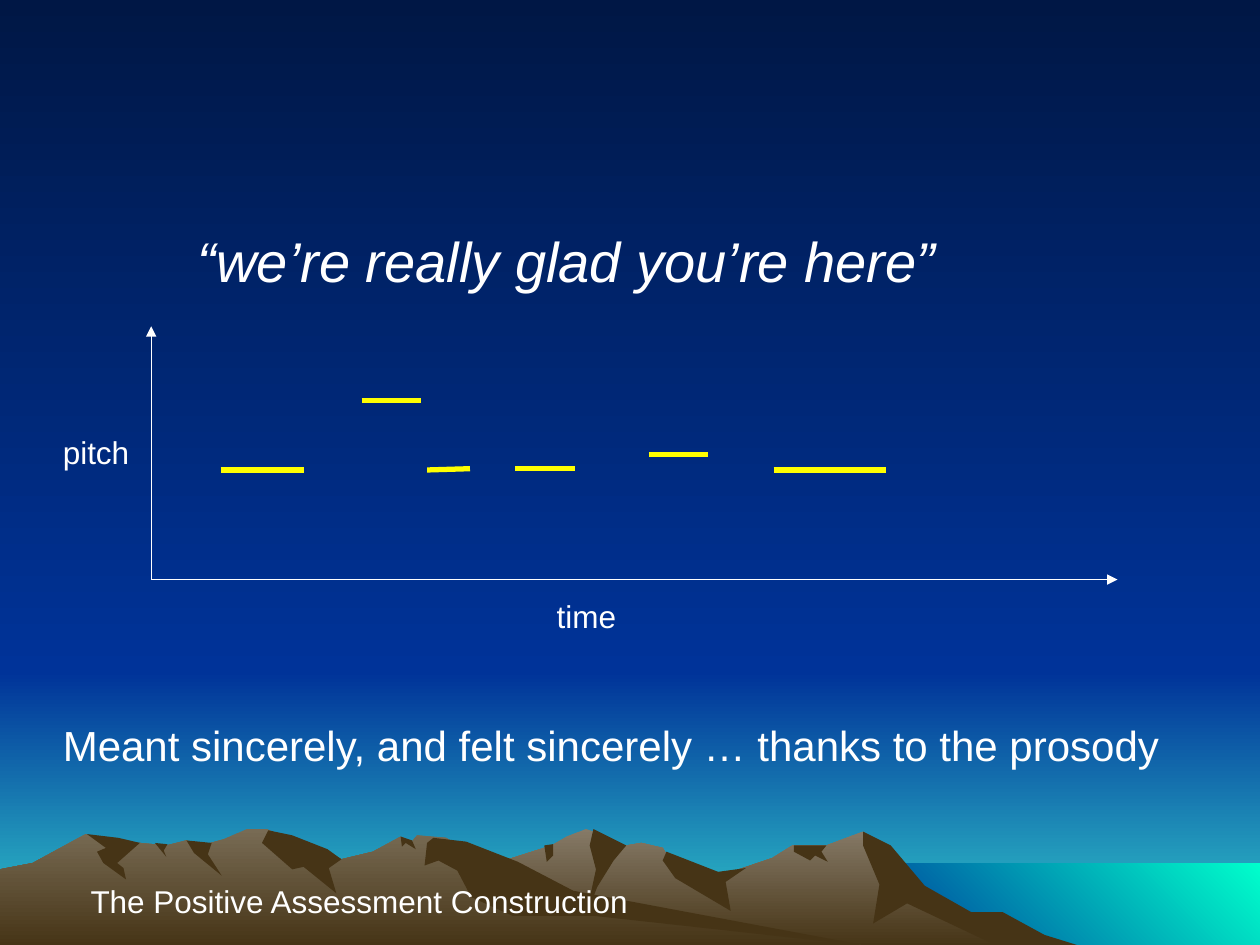
from lxml.etree import SubElement
from pptx import Presentation
from pptx.dml.color import RGBColor
from pptx.enum.shapes import MSO_CONNECTOR
from pptx.enum.text import MSO_AUTO_SIZE
from pptx.oxml.ns import qn
from pptx.util import Inches, Pt

WHITE = RGBColor(0xFF, 0xFF, 0xFF)
YELLOW = RGBColor(0xFF, 0xFF, 0x00)
NIGHT = RGBColor(0x00, 0x17, 0x45)
NAVY = RGBColor(0x00, 0x33, 0x99)
TEAL = RGBColor(0x33, 0xCC, 0xCC)
MINT = RGBColor(0x00, 0xFF, 0xCC)
BROWN = RGBColor(0x46, 0x34, 0x16)
STONE = RGBColor(0x86, 0x7A, 0x67)
CLAY = RGBColor(0x78, 0x6B, 0x54)
FONT = "Arial"
DOWN, RISE = 270, 45  # gradient angles

# Each range: crest from left to right, then the shaded slopes.
# Points are inches right of and below the top left of the range.
RIGHT_CREST = [
    (0.69, 0.51), (1.36, 0.27), (1.8, 0.13), (1.92, 0.06), (2.07, 0),
    (2.16, 0.03), (2.28, 0.15), (2.51, 0.11), (2.68, 0.15), (2.78, 0.32),
    (3.08, 0.39), (3.55, 0.23), (3.71, 0.13), (3.98, 0.13), (4.27, 0.02),
    (4.44, 0.13), (4.65, 0.4), (5.06, 0.65), (5.44, 0.82),
]
RIGHT_SHADE = {
    "east slope": [
        (4.27, 0.02), (4.49, 0.13), (4.76, 0.45), (5.13, 0.66), (5.38, 0.66),
        (5.71, 0.84), (6, 0.93), (5.34, 0.93), (4.62, 0.59), (4.35, 0.75),
        (4.4, 0.44), (4.27, 0.13)],
    "main gully": [
        (2.13, 0), (2.39, 0.13), (2.29, 0.25), (2.16, 0.46), (2.07, 0.69),
        (2.15, 0.32), (2.1, 0.13)],
    "middle gully": [
        (2.71, 0.18), (3.12, 0.34), (3.34, 0.31), (3.18, 0.42), (3.22, 0.65),
        (2.78, 0.39), (2.68, 0.25)],
    "notch": [
        (3.72, 0.13), (3.98, 0.13), (3.94, 0.18), (3.99, 0.26), (3.89, 0.21),
        (3.85, 0.25), (3.72, 0.18)],
    "crack": [(1.74, 0.13), (1.81, 0.12), (1.81, 0.21), (1.76, 0.26)],
}
LEFT_CREST = [
    (0, 0.32), (0.26, 0.27), (0.68, 0.04), (0.94, 0.13), (1.11, 0.11),
    (1.32, 0.13), (1.48, 0.09), (1.6, 0.13), (1.78, 0.08), (1.96, 0),
    (2.12, 0), (2.23, 0.05), (2.36, 0.23), (2.6, 0.18), (2.71, 0.24),
    (2.96, 0.18), (3.18, 0.06), (3.27, 0.1), (3.31, 0.05), (3.54, 0.07),
    (4.32, 0.54), (6.67, 0.9),
]
LEFT_SHADE = {
    "west gully": [
        (0.69, 0.04), (0.94, 0.07), (1.11, 0.11), (0.93, 0.27), (0.98, 0.31),
        (1, 0.4), (0.82, 0.27), (0.77, 0.18), (0.84, 0.15)],
    "nick": [(1.23, 0.11), (1.33, 0.12), (1.3, 0.17), (1.32, 0.22)],
    "short gully": [
        (1.48, 0.09), (1.68, 0.11), (1.65, 0.2), (1.76, 0.37), (1.54, 0.19)],
    "main gully": [
        (2.13, 0.01), (2.32, 0.05), (2.6, 0.16), (2.71, 0.24), (2.61, 0.31),
        (2.67, 0.51), (2.41, 0.3), (2.32, 0.32), (2.08, 0.11)],
    "crack": [
        (3.18, 0.06), (3.27, 0.09), (3.3, 0.16), (3.22, 0.11), (3.19, 0.14)],
    "long slope": [
        (3.44, 0.07), (3.7, 0.1), (4.11, 0.26), (4.55, 0.49), (6.9, 0.93),
        (4.72, 0.69), (4.07, 0.69), (3.74, 0.54), (3.63, 0.33), (3.48, 0.25),
        (3.37, 0.29), (3.39, 0.11)],
}

# Each syllable: start and end, from the top left of the chart
TONES = [
    (0.55, 1.14, 1.21, 1.14),
    (1.67, 0.59, 2.14, 0.59),
    (2.19, 1.14, 2.53, 1.13),
    (2.89, 1.13, 3.36, 1.13),
    (4.94, 1.14, 5.83, 1.14),
    (3.95, 1.02, 4.42, 1.02),
]


def area(*sides):
    return [Inches(side) for side in sides]


def part(box, left, top, width, height):
    """Return a box placed from the top left of another box."""
    return [box[0] + Inches(left), box[1] + Inches(top),
            Inches(width), Inches(height)]


def shade(fill, first, last, angle=DOWN):
    fill.gradient()
    fill.gradient_angle = angle
    for stop, color in zip(fill.gradient_stops, (first, last)):
        stop.color.rgb = color


def outline(shapes, box, points):
    """Draw a closed outline, without a line, from points in inches."""
    dots = [part(box, x, y, 0, 0)[:2] for x, y in points]
    pen = shapes.build_freeform(*dots[0])
    pen.add_line_segments(dots[1:], close=True)
    shape = pen.convert_to_shape()
    shape.shadow.inherit = False
    shape.line.fill.background()
    return shape


def band(shapes, box, first, last, angle=DOWN):
    wide, high = box[2].inches, box[3].inches
    corners = [(0, 0), (wide, 0), (wide, high), (0, high)]
    shade(outline(shapes, box, corners).fill, first, last, angle)


def hills(slide, box, crest, slopes, color):
    shapes = slide.shapes.add_group_shape().shapes
    wide, high = box[2].inches, box[3].inches
    rock = outline(shapes, box, crest + [(wide, high), (0, high)])
    shade(rock.fill, color, BROWN)
    for points in slopes.values():
        fill = outline(shapes, box, points).fill
        fill.solid()
        fill.fore_color.rgb = BROWN


def scene(slide, box):
    shade(slide.background.fill, NIGHT, NAVY)
    # Dusk below, night above, then the water
    sky = slide.shapes.add_group_shape().shapes
    band(sky, part(box, 0, 5.33, 10, 2.17), NAVY, TEAL)
    band(sky, part(box, 0, 0, 10, 5.33), NIGHT, NAVY)
    band(slide.shapes, part(box, 6.83, 6.85, 3.17, 0.67), NAVY, MINT, RISE)
    # Mountains, the left range in front
    hills(slide, part(box, 2.58, 6.58, 5.62, 0.93),
          RIGHT_CREST, RIGHT_SHADE, STONE)
    hills(slide, part(box, 0, 6.58, 6.9, 0.93), LEFT_CREST, LEFT_SHADE, CLAY)


def write(para, text, size, slant=False):
    run = para.add_run()
    run.text = text
    run.font.name = FONT
    run.font.size = Pt(size)
    run.font.italic = slant
    run.font.color.rgb = WHITE


def quote(slide, box, text):
    body = slide.placeholders[1]
    body.left, body.top, body.width, body.height = box
    body.text_frame.auto_size = MSO_AUTO_SIZE.NONE
    para = body.text_frame.paragraphs[0]
    write(para, text, 32, True)
    para.space_before = Pt(6.4)
    # No bullet and no indent
    props = next(body.element.iter(qn("a:pPr")))
    props.set("marL", "0")
    props.set("indent", "0")
    SubElement(props, qn("a:buNone"))
    # In front of the scenery
    body.element.getparent().append(body.element)


def label(slide, box, text, size=18, wrap=False):
    frame = slide.shapes.add_textbox(*box).text_frame
    frame.word_wrap = wrap
    frame.auto_size = MSO_AUTO_SIZE.SHAPE_TO_FIT_TEXT
    write(frame.paragraphs[0], text, size)


def stroke(shapes, start, end, color, width, arrow=False):
    link = shapes.add_connector(MSO_CONNECTOR.STRAIGHT, *start, *end)
    link.line.color.rgb = color
    link.line.width = Pt(width)
    props = link.element.spPr
    if arrow:
        tail = SubElement(props.find(qn("a:ln")), qn("a:tailEnd"))
        tail.set("type", "triangle")
    SubElement(props, qn("a:effectLst"))


def chart(slide, box):
    left, top, width, height = box
    base = top + height
    # Axes, both from the origin
    for end in ((left, top), (left + width, base)):
        stroke(slide.shapes, (left, base), end, WHITE, 0.75, arrow=True)
    label(slide, part(box, 3.12, 2.1, 0.68, 0.4), "time")
    label(slide, part(box, -0.8, 0.8, 0.73, 0.4), "pitch")
    # Syllables
    shapes = slide.shapes.add_group_shape().shapes
    for x1, y1, x2, y2 in TONES:
        start, end = part(box, x1, y1, 0, 0)[:2], part(box, x2, y2, 0, 0)[:2]
        stroke(shapes, start, end, YELLOW, 3)


def main():
    deck = Presentation()
    deck.slide_width, deck.slide_height = area(10, 7.5)
    slide = deck.slides.add_slide(deck.slide_layouts[1])
    title = slide.shapes.title.element
    title.getparent().remove(title)
    scene(slide, area(0, 0, 10, 7.5))
    quote(slide, area(1.47, 1.75, 8.53, 0.9), "“we’re really glad you’re here”")
    chart(slide, area(1.2, 2.59, 7.67, 2.01))
    label(slide, area(0.4, 5.66, 9.23, 0.5),
          "Meant sincerely, and felt sincerely … thanks to the prosody", 24, True)
    label(slide, area(0.62, 6.95, 4.51, 0.4), "The Positive Assessment Construction")
    deck.save("out.pptx")


if __name__ == "__main__":
    main()
